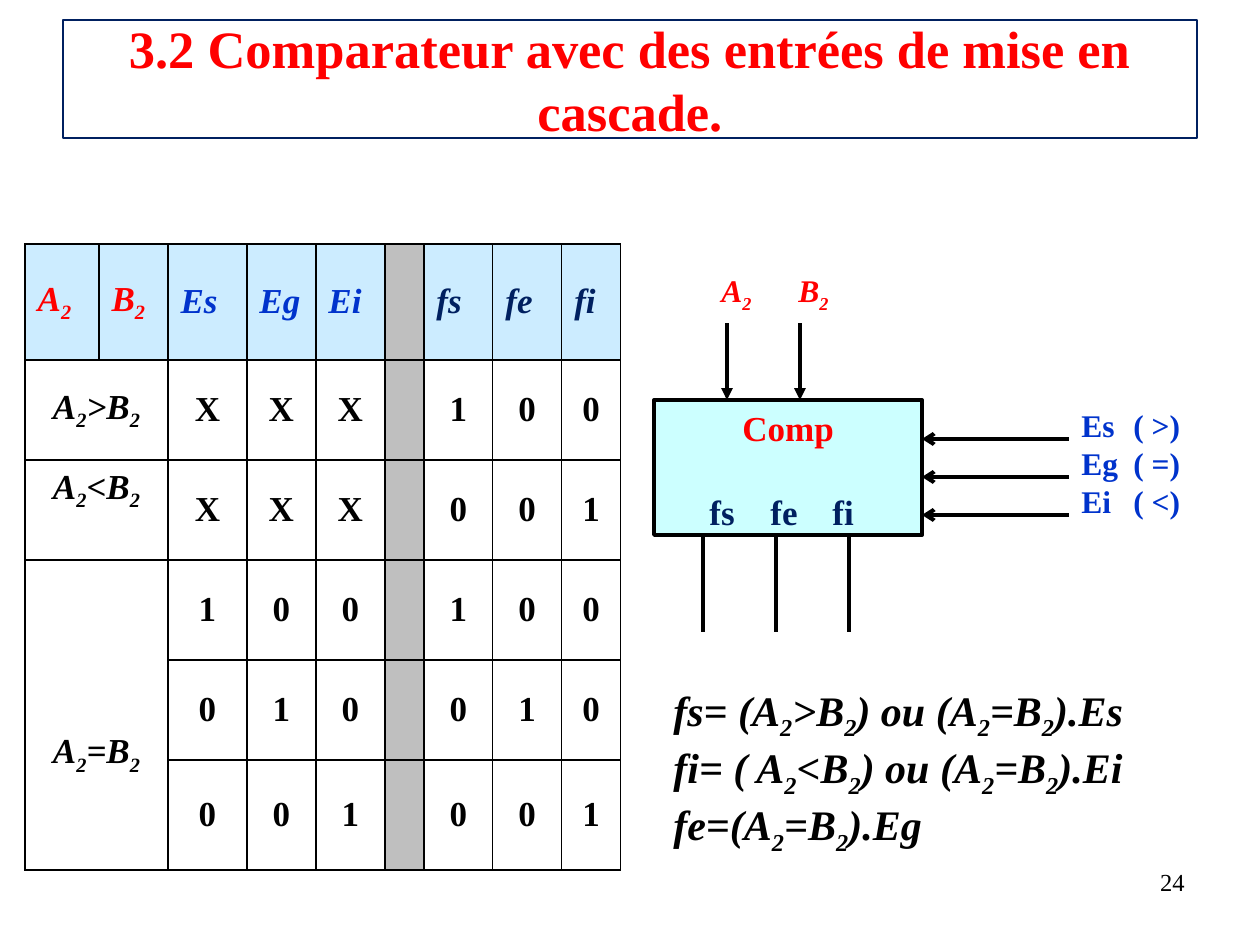
"""Build the slide on the comparator with cascading inputs."""
from lxml.etree import SubElement
from pptx import Presentation
from pptx.dml.color import RGBColor
from pptx.enum.shapes import MSO_CONNECTOR, MSO_SHAPE
from pptx.enum.text import MSO_ANCHOR, MSO_AUTO_SIZE, PP_ALIGN
from pptx.oxml.ns import qn
from pptx.util import Emu, Pt

PX = 914400 / 126
FONT = "Times New Roman"
BLACK = RGBColor(0x00, 0x00, 0x00)
WHITE = RGBColor(0xFF, 0xFF, 0xFF)
RED = RGBColor(0xFF, 0x00, 0x00)
BLUE = RGBColor(0x00, 0x33, 0xCC)
NAVY = RGBColor(0x00, 0x20, 0x60)
CYAN = RGBColor(0xCC, 0xFF, 0xFF)
PALE_BLUE = RGBColor(0xCC, 0xEC, 0xFF)
GREY = RGBColor(0xBF, 0xBF, 0xBF)

COLS = [74, 69, 79, 69, 69, 39, 69, 69, 59]
ROWS = [116, 100, 100, 100, 100, 110]
HEADER = [("A_2", RED), ("B_2", RED), ("Es", BLUE), ("Eg", BLUE), ("Ei", BLUE),
          ("", BLACK), ("fs", NAVY), ("fe", NAVY), ("fi", NAVY)]
TRUTH = ["XXX 100", "XXX 001", "100 100", "010 010", "001 001"]
CONDITIONS = [("A_2>B_2", 1, 1, 0, 0), ("A_2<B_2", 2, 2, 0, 40), ("A_2=B_2", 3, 5, 80, 0)]
FORMULAS = ["fs= (A_2>B_2) ou (A_2=B_2).Es", "fi= ( A_2<B_2) ou (A_2=B_2).Ei",
            "fe=(A_2=B_2).Eg"]


def px(n):
    """Turn pixels into EMU."""
    return Emu(round(n * PX))


def box_emu(box):
    """Turn a pixel box into EMU lengths."""
    return [px(n) for n in box]


def write(p, text, size=20, color=BLACK, bold=True, italic=False,
          align=PP_ALIGN.LEFT, before=0, tabs=()):
    """Write text into a paragraph, with an underscore before each subscript digit."""
    p.alignment = align
    p.space_before = Pt(before)
    if tabs:
        tab_list = SubElement(p._p.get_or_add_pPr(), qn("a:tabLst"))
        for stop in tabs:
            SubElement(tab_list, qn("a:tab"), pos=str(px(stop)), algn="l")
    first, *others = text.split("_")
    pieces = [(first, False)]
    for part in others:
        pieces += [(part[0], True), (part[1:], False)]
    for piece, lowered in pieces:
        if not piece:
            continue
        r = p.add_run()
        r.text = piece
        f = r.font
        f.name, f.size, f.bold, f.italic = FONT, Pt(size), bold, italic
        f.color.rgb = color
        if lowered:
            r._r.get_or_add_rPr().set("baseline", "-25000")


def write_lines(tf, lines, **fmt):
    """Write one paragraph for each line of text."""
    for i, line in enumerate(lines):
        write(tf.add_paragraph() if i else tf.paragraphs[0], line, **fmt)


def add_text(shapes, box, lines, **fmt):
    """Add a wrapped text box."""
    tf = shapes.add_textbox(*box_emu(box)).text_frame
    tf.word_wrap = True
    write_lines(tf, lines, **fmt)


def add_rect(shapes, box, fill, line=None):
    """Add a rectangle and return its text frame."""
    sp = shapes.add_shape(MSO_SHAPE.RECTANGLE, *box_emu(box))
    sp.shadow.inherit = False
    sp.fill.solid()
    sp.fill.fore_color.rgb = fill
    if line is None:
        sp.line.fill.background()
    else:
        sp.line.color.rgb = line
        sp.line.width = Pt(2.25)
    tf = sp.text_frame
    tf.word_wrap = True
    tf.vertical_anchor = MSO_ANCHOR.TOP
    return tf


def add_wire(shapes, x1, y1, x2, y2, head=None, tail=None):
    """Add a straight wire with optional arrowheads."""
    c = shapes.add_connector(MSO_CONNECTOR.STRAIGHT, *box_emu((x1, y1, x2, y2)))
    c.line.color.rgb = BLACK
    c.line.width = Pt(2.25)
    ln = c.line._get_or_add_ln()
    for tag, kind in (("a:headEnd", head), ("a:tailEnd", tail)):
        if kind:
            SubElement(ln, qn(tag), type=kind)
    SubElement(c._element.spPr, qn("a:effectLst"))


def add_title(s, box, text):
    """Place and format the title."""
    sp = s.shapes.title
    sp.left, sp.top, sp.width, sp.height = box_emu(box)
    sp.line.color.rgb = NAVY
    sp.line.width = Pt(0.75)
    tf = sp.text_frame
    tf.auto_size = MSO_AUTO_SIZE.NONE
    tf.vertical_anchor = MSO_ANCHOR.MIDDLE
    write(tf.paragraphs[0], text, size=30, color=RED, align=PP_ALIGN.CENTER)


def style_cell(cell, fill):
    """Give a cell its borders, fill and anchor."""
    tc_pr = cell._tc.get_or_add_tcPr()
    for side in ("a:lnL", "a:lnR", "a:lnT", "a:lnB"):
        ln = SubElement(tc_pr, qn(side), w=str(Pt(1)))
        SubElement(SubElement(ln, qn("a:solidFill")), qn("a:srgbClr"), val=str(BLACK))
    cell.fill.solid()
    cell.fill.fore_color.rgb = fill
    cell.vertical_anchor = MSO_ANCHOR.MIDDLE


def add_truth_table(s, x, y):
    """Add the truth table with its top left corner at x, y."""
    box = (x, y, sum(COLS), sum(ROWS))
    table = s.shapes.add_table(len(ROWS), len(COLS), *box_emu(box)).table
    table.first_row = table.horz_banding = False
    for col, width in zip(table.columns, COLS):
        col.width = px(width)
    for row, height in zip(table.rows, ROWS):
        row.height = px(height)
    for i in range(len(ROWS)):
        for j in range(len(COLS)):
            fill = GREY if j == 5 else WHITE if i else PALE_BLUE
            style_cell(table.cell(i, j), fill)
    for j, (name, color) in enumerate(HEADER):
        write(table.cell(0, j).text_frame.paragraphs[0], name, color=color, italic=True)
    for i, values in enumerate(TRUTH, 1):
        for j, value in enumerate(values, 2):
            write(table.cell(i, j).text_frame.paragraphs[0], value.strip(),
                  align=PP_ALIGN.CENTER)
    for text, top, bottom, above, below in CONDITIONS:
        cell = table.cell(top, 0)
        cell.merge(table.cell(bottom, 1))
        cell.margin_top, cell.margin_bottom = px(6 + above), px(6 + below)
        write(cell.text_frame.paragraphs[0], text, italic=True, align=PP_ALIGN.CENTER)


def add_comparator(s, x, y, w, h):
    """Add the comparator block with its inputs and outputs around the box."""
    shapes = s.shapes.add_group_shape().shapes
    tf = add_rect(shapes, (x, y, w, h), CYAN, BLACK)
    write(tf.paragraphs[0], "Comp", color=RED, align=PP_ALIGN.CENTER)
    write(tf.add_paragraph(), "\tfs\tfe\tfi", color=NAVY, before=24, tabs=(43, 104, 166))
    for i in range(2):
        wire_x = x + 73 * (i + 1)
        add_wire(shapes, wire_x, y - 77, wire_x, y, tail="triangle")
    for i in range(3):
        wire_x, wire_y = x + 49 + 73 * i, y + 39 + 38 * i
        add_wire(shapes, wire_x, y + h, wire_x, y + h + 97)
        add_wire(shapes, x + w, wire_y, x + w + 147, wire_y, head="arrow")
    tf = add_rect(shapes, (x + 24, y - 135, 195, 58), WHITE)
    write(tf.paragraphs[0], "\tA_2\tB_2", size=18, color=RED, italic=True, tabs=(31, 108))
    tf = add_rect(shapes, (x + w + 147, y, 135, 155), WHITE)
    write_lines(tf, ["Es\t( >)", "Eg\t( =)", "Ei\t( <)"], size=18, color=BLUE, tabs=(52,))


def main():
    """Build and save the slide."""
    prs = Presentation()
    prs.slide_width, prs.slide_height = px(1260), px(945)
    s = prs.slides.add_slide(prs.slide_layouts[5])
    add_title(s, (63, 20, 1134, 118),
              "3.2 Comparateur avec des entrées de mise en cascade.")
    add_truth_table(s, 25, 244)
    add_comparator(s, 654, 400, 268, 135)
    add_text(s.shapes, (661, 678, 596, 165), FORMULAS, size=24, italic=True)
    add_text(s.shapes, (903, 861, 294, 66), ["24"], size=14, bold=False,
             align=PP_ALIGN.RIGHT)
    prs.save("out.pptx")


if __name__ == "__main__":
    main()
